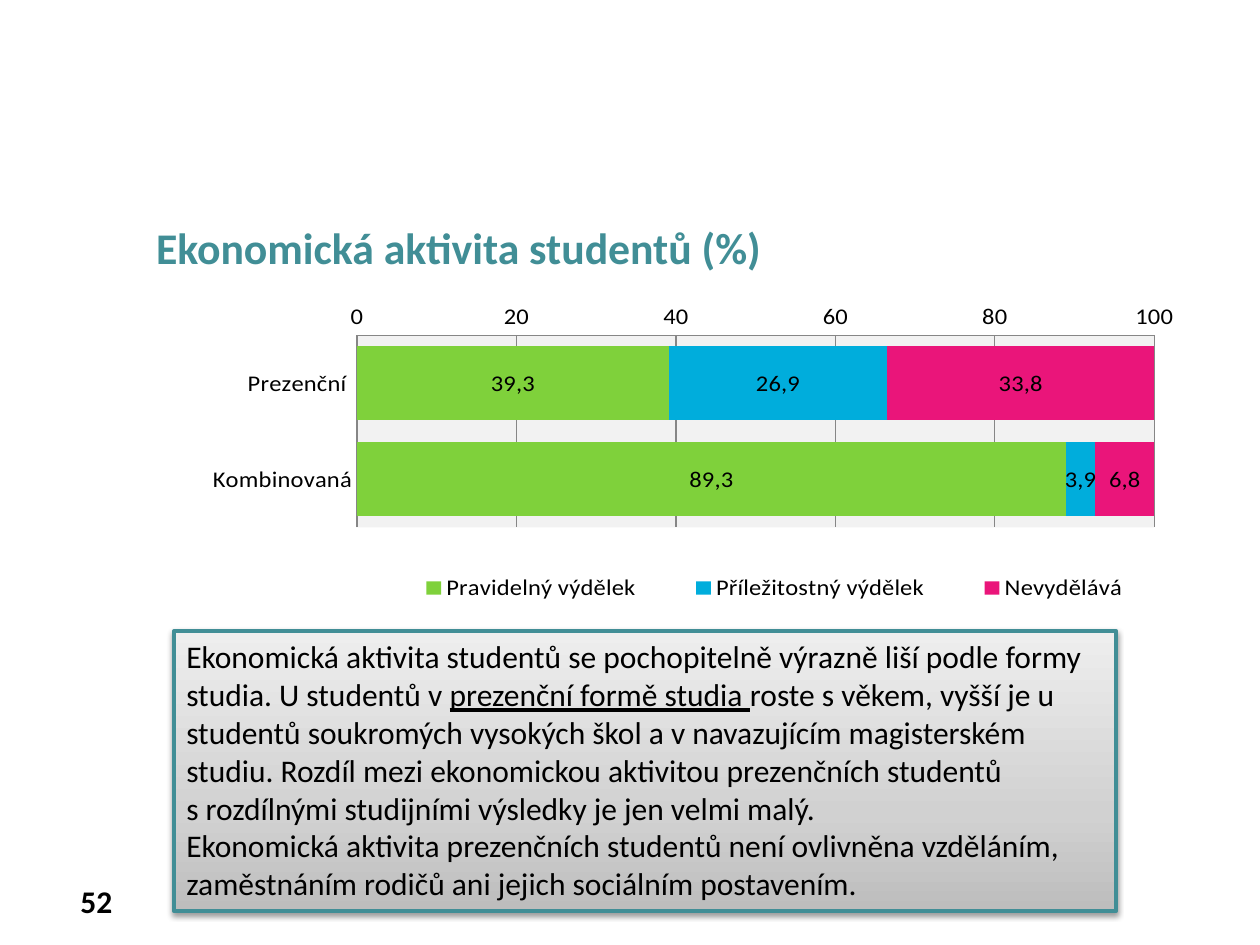
from lxml import etree
from pptx import Presentation
from pptx.chart.data import CategoryChartData
from pptx.dml.color import RGBColor
from pptx.enum.chart import (XL_AXIS_CROSSES, XL_CHART_TYPE, XL_LABEL_POSITION,
                             XL_LEGEND_POSITION, XL_TICK_MARK)
from pptx.enum.shapes import MSO_SHAPE
from pptx.enum.text import MSO_ANCHOR, PP_ALIGN
from pptx.oxml import parse_xml
from pptx.oxml.ns import nsdecls, qn
from pptx.util import Inches, Pt

BAR = XL_CHART_TYPE.BAR_STACKED
CENTER = XL_LABEL_POSITION.CENTER
BOTTOM = XL_LEGEND_POSITION.BOTTOM
CROSS_MAX = XL_AXIS_CROSSES.MAXIMUM
NO_TICK = XL_TICK_MARK.NONE
RECT = MSO_SHAPE.RECTANGLE
TOP, MIDDLE = MSO_ANCHOR.TOP, MSO_ANCHOR.MIDDLE
LEFT, RIGHT = PP_ALIGN.LEFT, PP_ALIGN.RIGHT

FONT = "Calibri"
WIDTH, HEIGHT = Inches(10), Inches(7.5)
COLORS = {
    "text": "000000", "teal": "418E96", "plot": "F2F2F2", "grid": "868686",
    "regular": "7FD13B", "occasional": "00ADDC", "none": "EA157A",
    "dark": "BDBDBD", "mid": "D1D1D1", "light": "EEEEEE",
}
# left, top, width, height as shares of the slide
BOXES = {
    "number": (0.028, 0.927, 0.071, 0.053),
    "title": (0.114, 0.227, 0.878, 0.084),
    "chart": (0.154, 0.321, 0.794, 0.325),
    "comment": (0.138, 0.668, 0.748, 0.296),
}
CATEGORIES = ["Prezenční ", "Kombinovaná"]
# name, colour, bar lengths, printed labels
SERIES = [
    ("Pravidelný výdělek", "regular", (39.1, 88.9), ("39,3", "89,3")),
    ("Příležitostný výdělek", "occasional", (27.4, 3.7), ("26,9", "3,9")),
    ("Nevydělává", "none", (33.5, 7.4), ("33,8", "6,8")),
]
COMMENT = [
    [("Ekonomická aktivita studentů se pochopitelně výrazně liší podle formy studia. "
      "U studentů v ", False),
     ("prezenční formě studia ", True),
     ("roste s věkem, vyšší je u studentů soukromých vysokých škol a v navazujícím "
      "magisterském studiu. Rozdíl mezi ekonomickou aktivitou prezenčních studentů "
      "s\u00a0rozdílnými studijními výsledky je jen velmi malý.", False)],
    [("Ekonomická aktivita prezenčních studentů není ovlivněna vzděláním, "
      "zaměstnáním rodičů ani jejich sociálním postavením.", False)],
]


def rgb(name):
    return RGBColor.from_string(COLORS[name])


def place(box):
    """Turn shares of the slide into lengths."""
    return [round(share * size) for share, size in zip(box, (WIDTH, HEIGHT) * 2)]


def set_font(font, size, color="text", bold=False):
    font.name, font.size, font.bold = FONT, Pt(size), bold
    font.color.rgb = rgb(color)


def write(tf, paragraphs, size=18, color="text", bold=False, align=LEFT, anchor=TOP):
    """Fill a text frame with paragraphs of (text, underlined) runs."""
    tf.word_wrap, tf.vertical_anchor = True, anchor
    for i, runs in enumerate(paragraphs):
        p = tf.paragraphs[0] if i == 0 else tf.add_paragraph()
        p.alignment = align
        for text, underlined in runs:
            r = p.add_run()
            r.text = text
            set_font(r.font, size, color, bold)
            r.font.underline = underlined


def add_text(slide, box, text, **style):
    tf = slide.shapes.add_textbox(*place(box)).text_frame
    write(tf, [[(text, False)]], **style)


def layout_xml(x, y, w, h, inner=False):
    """Manual layout in shares of the chart's area."""
    target = '<c:layoutTarget val="inner"/>' if inner else ""
    return parse_xml(
        f'<c:layout {nsdecls("c")}><c:manualLayout>{target}'
        '<c:xMode val="edge"/><c:yMode val="edge"/>'
        f'<c:x val="{x}"/><c:y val="{y}"/><c:w val="{w}"/><c:h val="{h}"/>'
        '</c:manualLayout></c:layout>')


def style_axes(chart):
    cat, val = chart.category_axis, chart.value_axis
    cat.reverse_order = True
    cat.crosses = CROSS_MAX
    val.minimum_scale, val.maximum_scale, val.major_unit = 0, 100, 20
    val.has_major_gridlines = True
    val.tick_labels.number_format = "0"
    val.tick_labels.number_format_is_linked = False
    for axis in (cat, val):
        axis.major_tick_mark = axis.minor_tick_mark = NO_TICK
    for line in (cat.format.line, val.format.line, val.major_gridlines.format.line):
        line.color.rgb, line.width = rgb("grid"), Pt(0.75)


def style_series(series, color, labels):
    series.format.fill.solid()
    series.format.fill.fore_color.rgb = rgb(color)
    series.data_labels.show_value = True
    series.data_labels.position = CENTER
    for i, text in enumerate(labels):
        label = series.points[i].data_label
        r = label.text_frame.paragraphs[0].add_run()
        r.text = text
        set_font(r.font, 14)
        label.position = CENTER


def style_plot_area(chart):
    area = chart.plots[0]._element.getparent()
    for old in area.findall(qn("c:layout")):
        area.remove(old)
    area.insert(0, layout_xml(0.163, 0.018, 0.797, 0.686, inner=True))
    area.append(parse_xml(
        f'<c:spPr {nsdecls("c", "a")}><a:solidFill><a:srgbClr val="{COLORS["plot"]}"/>'
        '</a:solidFill></c:spPr>'))


def style_legend(chart):
    chart.has_legend = True
    legend = chart.legend
    legend.position, legend.include_in_layout = BOTTOM, False
    element = legend._element
    for old in element.findall(qn("c:layout")):
        element.remove(old)
    element.find(qn("c:legendPos")).addnext(layout_xml(0.18, 0.86, 0.8, 0.12))


def add_activity_chart(slide, box):
    data = CategoryChartData(number_format="General")
    data.categories = CATEGORIES
    for name, _, values, _ in SERIES:
        data.add_series(name, values)
    chart = slide.shapes.add_chart(BAR, *place(box), data).chart
    chart.has_title = False
    set_font(chart.font, 14)
    plot = chart.plots[0]
    plot.gap_width, plot.overlap, plot.vary_by_categories = 30, 100, False
    for series, (_, color, _, labels) in zip(plot.series, SERIES):
        style_series(series, color, labels)
    style_axes(chart)
    style_plot_area(chart)
    style_legend(chart)


def add_comment(slide, box):
    """Shaded box with a gradient, a teal frame and a soft shadow."""
    sp = slide.shapes.add_shape(RECT, *place(box))
    stops = "".join(
        f'<a:gs pos="{pos * 1000}"><a:srgbClr val="{COLORS[name]}"/></a:gs>'
        for pos, name in ((0, "dark"), (35, "mid"), (100, "light")))
    sp._element.spPr.find(qn("a:prstGeom")).addnext(parse_xml(
        f'<a:gradFill {nsdecls("a")} rotWithShape="1"><a:gsLst>{stops}</a:gsLst>'
        '<a:lin ang="16200000" scaled="1"/></a:gradFill>'))
    sp.line.color.rgb, sp.line.width = rgb("teal"), Pt(2.25)
    sp.shadow.inherit = False
    shadow = etree.SubElement(
        sp._element.spPr.find(qn("a:effectLst")), qn("a:outerShdw"),
        blurRad=str(Pt(3.1)), dist=str(Pt(1.6)), dir="5400000", rotWithShape="0")
    color = etree.SubElement(shadow, qn("a:srgbClr"), val=COLORS["text"])
    etree.SubElement(color, qn("a:alpha"), val="38000")
    write(sp.text_frame, COMMENT)


def main():
    prs = Presentation()
    prs.slide_width, prs.slide_height = WIDTH, HEIGHT
    slide = prs.slides.add_slide(prs.slide_layouts[6])
    add_text(slide, BOXES["number"], "52", bold=True, align=RIGHT, anchor=MIDDLE)
    add_text(slide, BOXES["title"], "Ekonomická aktivita studentů (%)",
             size=25, color="teal", bold=True)
    add_comment(slide, BOXES["comment"])
    add_activity_chart(slide, BOXES["chart"])
    prs.save("out.pptx")


if __name__ == "__main__":
    main()
